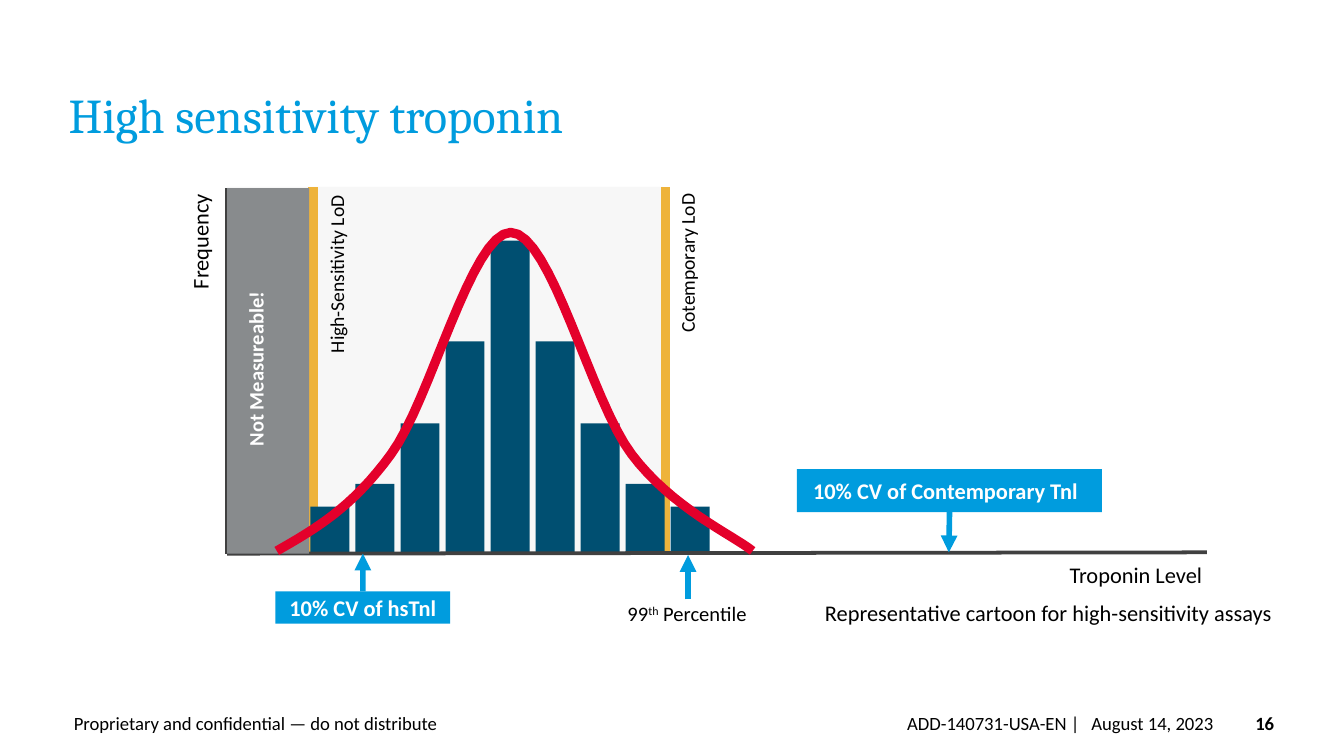
from dataclasses import dataclass

import pptx
import pptx.dml.color
import pptx.enum.shapes
import pptx.enum.text
import pptx.oxml
import pptx.oxml.ns
import pptx.util

Inches = pptx.util.Inches
Pt = pptx.util.Pt
RGBColor = pptx.dml.color.RGBColor
ALIGN = pptx.enum.text.PP_ALIGN
ANCHOR = pptx.enum.text.MSO_ANCHOR

BLACK = RGBColor(0x00, 0x00, 0x00)
WHITE = RGBColor(0xFF, 0xFF, 0xFF)
BLUE = RGBColor(0x00, 0x9C, 0xDE)
NAVY = RGBColor(0x00, 0x4F, 0x71)
GOLD = RGBColor(0xEE, 0xB3, 0x3B)
RED = RGBColor(0xE4, 0x00, 0x2B)
GRAY = RGBColor(0x88, 0x8B, 0x8D)
DARK_GRAY = RGBColor(0x40, 0x40, 0x40)
PALE_GRAY = RGBColor(0xF2, 0xF2, 0xF2)

BASELINE = 4.12
BAR_WIDTH, FIRST_BAR, LAST_BAR = 0.29, 2.31, 4.99
BAR_HEIGHTS = [0.35, 0.52, 0.97, 1.58, 2.33, 1.58, 0.97, 0.52, 0.35]
BAR_STEP = (LAST_BAR - FIRST_BAR) / (len(BAR_HEIGHTS) - 1)

CURVE_START = (2.06, 4.1)
CURVE_SEGMENTS = [
    ((2.34, 3.94), (2.62, 3.78), (2.91, 3.38)),
    ((3.2, 2.99), (3.51, 1.73), (3.8, 1.73)),
    ((4.1, 1.73), (4.4, 2.99), (4.7, 3.38)),
    ((5, 3.78), (5.45, 3.98), (5.6, 4.1)),
]
CURVE_STEPS = 16


@dataclass
class Label:
    text: str
    left: float
    top: float
    width: float
    height: float
    size: float = 12
    color: RGBColor = BLACK
    bold: bool = False
    align: ALIGN = ALIGN.LEFT
    anchor: ANCHOR = ANCHOR.TOP
    rotation: float = 0
    wrap: bool = False
    side_inset: float = 0.1


@dataclass
class Line:
    start: tuple[float, float]
    end: tuple[float, float]
    color: RGBColor
    width: float
    arrow: bool = False


CHART_LABELS = [
    Label("Troponin Level", 7.86, 4.13, 1.2, 0.3),
    Label("Frequency", 0.93, 1.75, 1.11, 0.3, align=ALIGN.RIGHT,
          anchor=ANCHOR.BOTTOM, rotation=270, wrap=True),
    Label("Cotemporary LoD", 4.49, 1.81, 1.25, 0.28, 10.5, rotation=270),
    Label("High-Sensitivity LoD", 1.81, 1.89, 1.39, 0.28, 10.5, rotation=270),
    Label("Representative cartoon for high-sensitivity assays", 6.04, 4.41, 3.56, 0.3),
]
FOOTER_LABELS = [
    Label("Proprietary and confidential — do not distribute", 0.55, 5.11, 3.03, 0.4),
    Label("ADD-140731-USA-EN |", 6.22, 5.21, 1.81, 0.3, align=ALIGN.RIGHT),
    Label("August 14, 2023", 8.12, 5.21, 1.3, 0.3),
    Label("16", 9.25, 5.21, 0.32, 0.3, bold=True, align=ALIGN.CENTER),
]
for footer in FOOTER_LABELS:
    footer.size, footer.anchor = 10, ANCHOR.BOTTOM
    footer.wrap, footer.side_inset = True, 0


def format_text(shape, label: Label) -> None:
    text_frame = shape.text_frame
    text_frame.text = label.text
    text_frame.word_wrap = label.wrap
    text_frame.vertical_anchor = label.anchor
    text_frame.margin_left = text_frame.margin_right = Inches(label.side_inset)
    paragraph = text_frame.paragraphs[0]
    paragraph.alignment = label.align
    for run in paragraph.runs:
        format_run(run, label)


def format_run(run, label: Label) -> None:
    run.font.name = "Calibri"
    run.font.size = Pt(label.size)
    run.font.bold = label.bold
    run.font.color.rgb = label.color


def add_label(slide, label: Label):
    box = slide.shapes.add_textbox(
        Inches(label.left), Inches(label.top), Inches(label.width), Inches(label.height))
    box.rotation = label.rotation
    format_text(box, label)
    return box


def add_percentile_label(slide) -> None:
    """Add the 99th percentile label, with its ordinal ending raised."""
    label = Label("99", 4.57, 4.42, 1.12, 0.29, 11)
    paragraph = add_label(slide, label).text_frame.paragraphs[0]
    for text in ("th", " Percentile"):
        run = paragraph.add_run()
        run.text = text
        format_run(run, label)
    paragraph.runs[1]._r.get_or_add_rPr().set("baseline", "30000")


def add_rectangle(slide, left: float, top: float, width: float, height: float,
                  color: RGBColor):
    shape = slide.shapes.add_shape(
        pptx.enum.shapes.MSO_SHAPE.RECTANGLE,
        Inches(left), Inches(top), Inches(width), Inches(height))
    shape.shadow.inherit = False
    shape.fill.solid()
    shape.fill.fore_color.rgb = color
    shape.line.fill.background()
    return shape


def add_callout(slide, label: Label):
    shape = add_rectangle(slide, label.left, label.top, label.width, label.height, BLUE)
    format_text(shape, label)
    shape.text_frame.margin_top = shape.text_frame.margin_bottom = 0
    return shape


def add_sub_element(parent, tag: str, **attributes: str) -> None:
    element = parent.makeelement(pptx.oxml.ns.qn(tag), attributes)
    parent.append(element)


def add_line(slide, line: Line):
    connector = slide.shapes.add_connector(
        pptx.enum.shapes.MSO_CONNECTOR.STRAIGHT,
        *(Inches(value) for value in line.start + line.end))
    connector.line.color.rgb = line.color
    connector.line.width = Pt(line.width)
    if line.arrow:
        add_sub_element(connector.line._get_or_add_ln(), "a:tailEnd", type="triangle")
    add_sub_element(connector._element.spPr, "a:effectLst")
    return connector


def add_distribution_curve(slide) -> None:
    """Draw the cubic Bézier segments as one finely divided open outline."""
    points, start = [], CURVE_START
    for first, second, end in CURVE_SEGMENTS:
        for step in range(1, CURVE_STEPS + 1):
            t = step / CURVE_STEPS
            u = 1 - t
            points.append(tuple(
                Inches(u**3 * a + 3 * u * u * t * b + 3 * u * t * t * c + t**3 * d)
                for a, b, c, d in zip(start, first, second, end)))
        start = end
    builder = slide.shapes.build_freeform(*(Inches(value) for value in CURVE_START))
    builder.add_line_segments(points, close=False)
    curve = builder.convert_to_shape()
    curve.shadow.inherit = False
    curve.fill.background()
    curve.line.color.rgb = RED
    curve.line.width = Pt(5)


def format_title(slide) -> None:
    title = slide.shapes.title
    title.left, title.top = Inches(0.51), Inches(0.72)
    title.width, title.height = Inches(8.9), Inches(0.39)
    format_text(title, Label("High sensitivity troponin", 0.51, 0.72, 8.9, 0.39, 26, BLUE,
                             anchor=ANCHOR.MIDDLE, wrap=True, side_inset=0))
    title.text_frame.margin_top = 0
    paragraph = title.text_frame.paragraphs[0]
    paragraph.line_spacing = 0.8
    paragraph.runs[0].font.name = "Cambria"


def main() -> None:
    presentation = pptx.Presentation()
    presentation.slide_width = Inches(10)
    presentation.slide_height = Inches(10 * 9 / 16)
    slide = presentation.slides.add_slide(presentation.slide_layouts[5])
    format_title(slide)

    background = add_rectangle(slide, 1.69, 1.39, 3.24, 2.72, PALE_GRAY)
    color = background.fill._xPr.find(".//" + pptx.oxml.ns.qn("a:srgbClr"))
    add_sub_element(color, "a:alpha", val="56000")

    for x in (2.33, 4.95):
        add_line(slide, Line((x, BASELINE), (x, 1.39), GOLD, 5))
    add_line(slide, Line((1.69, 1.4), (1.69, BASELINE), DARK_GRAY, 2))
    for index, height in enumerate(BAR_HEIGHTS):
        add_rectangle(slide, FIRST_BAR + index * BAR_STEP, BASELINE - height,
                      BAR_WIDTH, height, NAVY)
    add_line(slide, Line((1.69, BASELINE), (8.98, 4.11), DARK_GRAY, 2))

    add_rectangle(slide, 1.69, 1.4, 0.61, 2.72, GRAY)
    unmeasurable = add_label(slide, Label("Not Measureable!", 1.76, 1.39, 0.39, 2.71, 11, WHITE,
                                          bold=True, align=ALIGN.CENTER, wrap=True))
    unmeasurable.text_frame._txBody.bodyPr.set("vert", "vert270")

    contemporary = add_callout(slide, Label(
        "10% CV of Contemporary Tnl", 5.93, 3.49, 2.27, 0.32, 12, WHITE, bold=True,
        anchor=ANCHOR.MIDDLE, wrap=True, side_inset=0.12))
    high_sensitivity = add_callout(slide, Label(
        "10% CV of hsTnl", 2.05, 4.4, 1.3, 0.24, 12, WHITE, bold=True,
        align=ALIGN.CENTER, anchor=ANCHOR.MIDDLE, wrap=True, side_inset=0))
    arrow = add_line(slide, Line((7.06, 3.81), (7.06, 4.11), BLUE, 3, arrow=True))
    arrow.begin_connect(contemporary, 2)
    arrow = add_line(slide, Line((2.7, 4.4), (2.7, BASELINE), BLUE, 3, arrow=True))
    arrow.begin_connect(high_sensitivity, 0)
    add_line(slide, Line((5.12, 4.46), (5.12, 4.13), BLUE, 3, arrow=True))

    add_distribution_curve(slide)
    add_percentile_label(slide)
    for label in CHART_LABELS + FOOTER_LABELS:
        add_label(slide, label)
    presentation.save("out.pptx")


if __name__ == "__main__":
    main()
